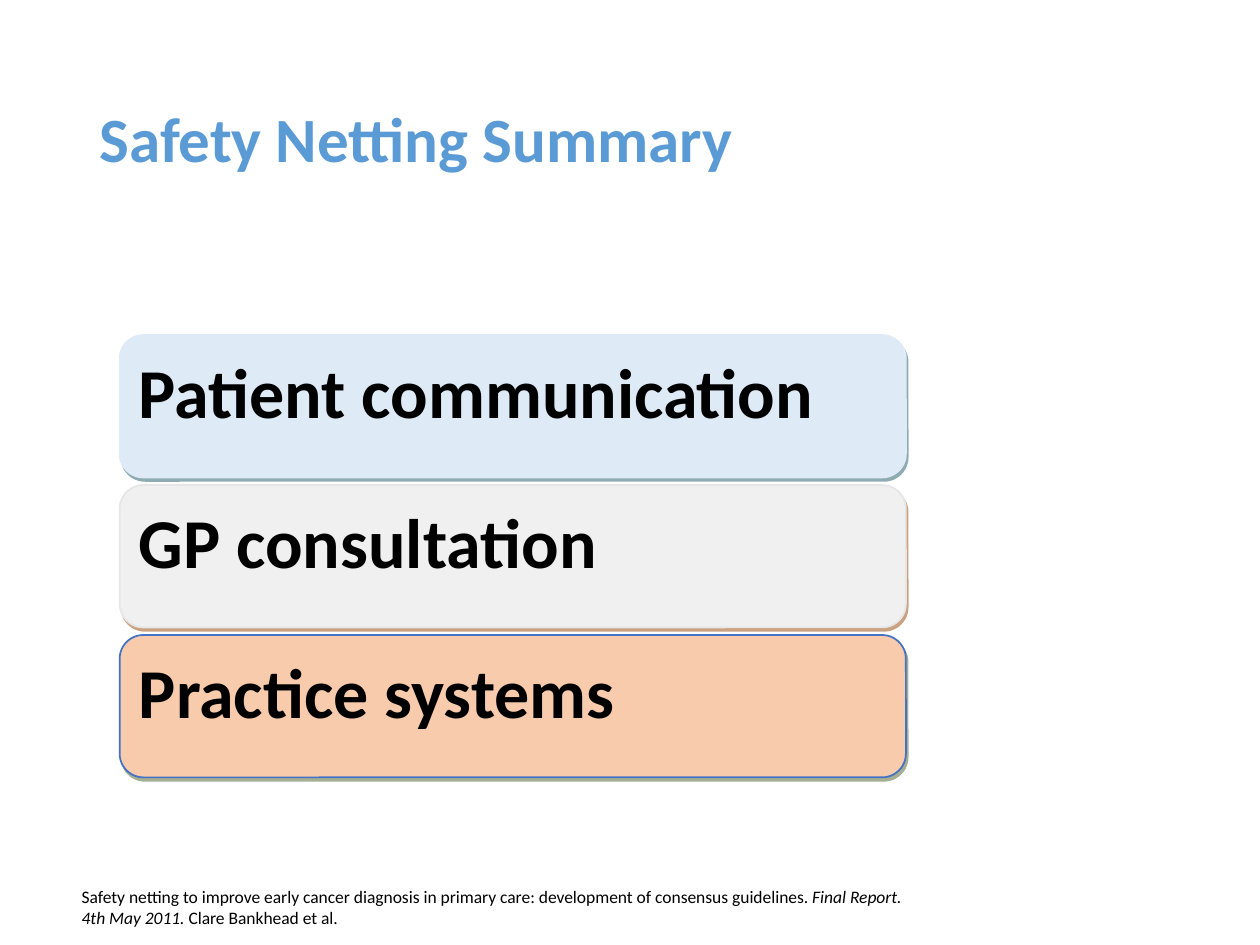
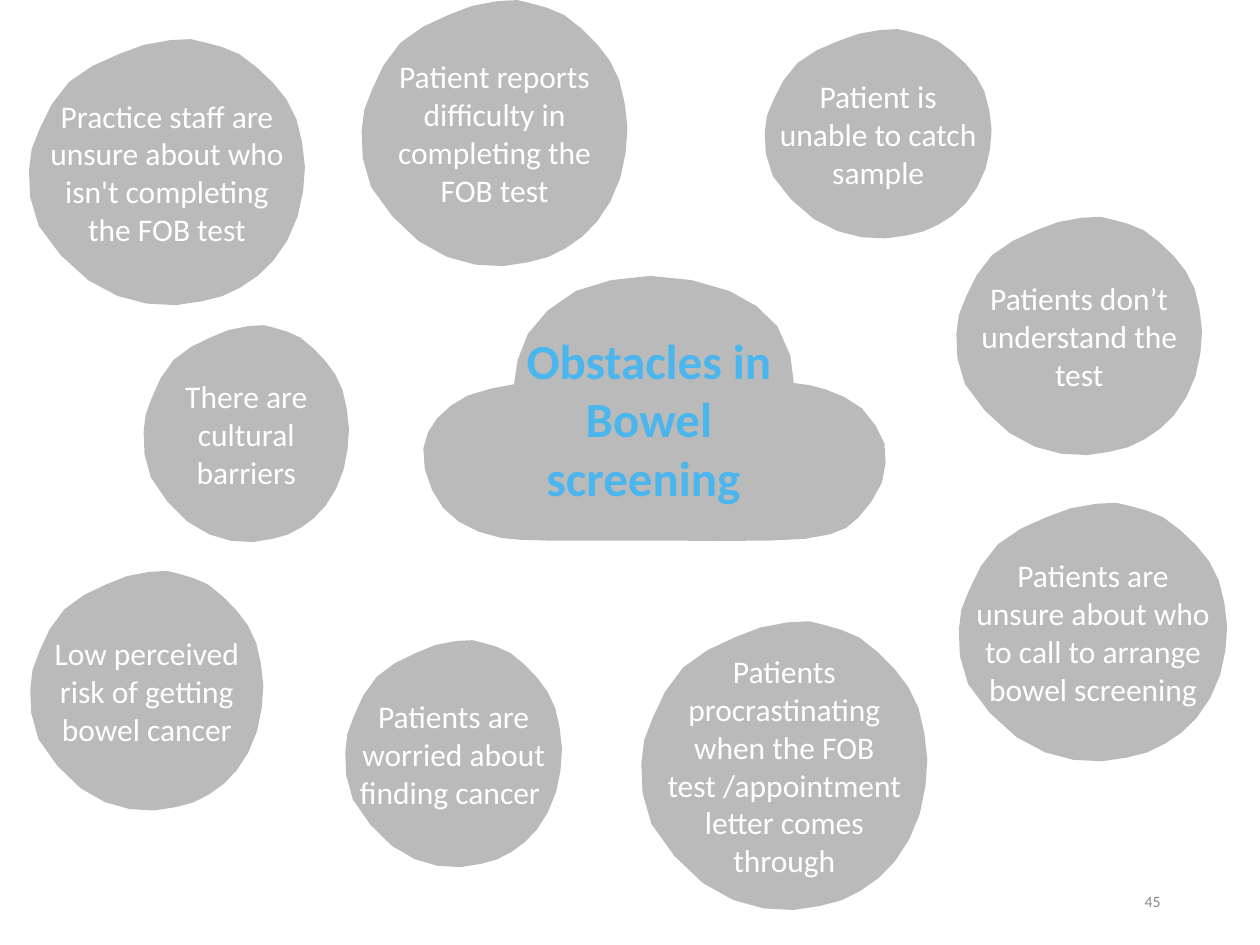
import lxml.etree
import pptx
import pptx.dml.color
import pptx.enum.shapes
import pptx.enum.text
import pptx.oxml.ns
import pptx.util

FONT = "Calibri"
COLORS = {
    "title": "5B9BD5", "ink": "000000", "paper": "FFFFFF", "bubble": "BABABA",
    "heading": "4BB6ED", "number": "8C8C8C",
    "patient": "DEEBF7", "patient shadow": "205867",
    "consultation": "F1F0F0", "consultation edge": "E7E6E6", "consultation shadow": "974706",
    "practice": "F8CBAD", "practice edge": "4472C4", "practice shadow": "4E6128",
}
COLUMNS = 100
ALIGN = pptx.enum.text.PP_ALIGN
ANCHOR = pptx.enum.text.MSO_ANCHOR
AUTO_SIZE = pptx.enum.text.MSO_AUTO_SIZE
rgb = pptx.dml.color.RGBColor.from_string

deck = pptx.Presentation()
deck.slide_width = pptx.util.Inches(10)
deck.slide_height = pptx.util.Inches(7.5)
title_only = deck.slide_layouts[5]


def grid(*cells):
    """Turn counts of square grid cells, 100 across the slide, into EMU."""
    return [round(cell * deck.slide_width / COLUMNS) for cell in cells]


def write(paragraph, text, size, color, bold=False, italic=False):
    run = paragraph.add_run()
    run.text = text
    run.font.name = FONT
    run.font.size = pptx.util.Pt(size)
    run.font.bold = bold
    run.font.italic = italic
    run.font.color.rgb = rgb(COLORS[color])


# Slide 1: safety netting summary
summary = deck.slides.add_slide(title_only)
title = summary.shapes.title
title.left, title.top, title.width, title.height = grid(6.9, 4, 86.2, 14.5)
title.text_frame.vertical_anchor = ANCHOR.MIDDLE
title.text_frame.auto_size = AUTO_SIZE.NONE
heading = title.text_frame.paragraphs[0]
heading.alignment = ALIGN.LEFT
heading.line_spacing = 0.9
write(heading, "Safety Netting Summary", 36, "title", bold=True)

AREAS = [
    ("Patient communication", "patient", "patient", "patient shadow"),
    ("GP consultation", "consultation", "consultation edge", "consultation shadow"),
    ("Practice systems", "practice", "practice edge", "practice shadow"),
]
AREA_TOP, AREA_PITCH = 26.6, 11.9
for row, (label, fill, edge, shadow) in enumerate(AREAS):
    area = summary.shapes.add_shape(
        pptx.enum.shapes.MSO_SHAPE.ROUNDED_RECTANGLE,
        *grid(9.5, AREA_TOP + row * AREA_PITCH, 62.4, 11.3))
    area.shadow.inherit = False
    area.fill.solid()
    area.fill.fore_color.rgb = rgb(COLORS[fill])
    area.line.color.rgb = rgb(COLORS[edge])
    area.line.width = pptx.util.Pt(1)

    effects = area._element.spPr.find(pptx.oxml.ns.qn("a:effectLst"))
    cast = lxml.etree.SubElement(
        effects, pptx.oxml.ns.qn("a:outerShdw"), blurRad="0",
        dist=str(pptx.util.Pt(2.2)), dir=str(63 * 60000), algn="ctr", rotWithShape="0")
    tint = lxml.etree.SubElement(cast, pptx.oxml.ns.qn("a:srgbClr"), val=COLORS[shadow])
    lxml.etree.SubElement(tint, pptx.oxml.ns.qn("a:alpha"), val="50000")

    area.text_frame.vertical_anchor = ANCHOR.TOP
    line = area.text_frame.paragraphs[0]
    line.alignment = ALIGN.LEFT
    line.space_after = pptx.util.Pt(10)
    write(line, label, 40, "ink", bold=True)

CITATION = [
    [("Safety netting to improve early cancer diagnosis in primary care: "
      "development of consensus guidelines. ", False), ("Final Report.", True)],
    [("4th May 2011. ", True), ("Clare Bankhead et al.", False)],
]
citation = summary.shapes.add_textbox(*grid(5.5, 69.8, 91.4, 4.4)).text_frame
citation.word_wrap = True
citation.auto_size = AUTO_SIZE.SHAPE_TO_FIT_TEXT
for row, parts in enumerate(CITATION):
    line = citation.add_paragraph() if row else citation.paragraphs[0]
    hanging = pptx.util.Inches(0.25)
    line._p.get_or_add_pPr().set("marL", str(hanging))
    line._p.get_or_add_pPr().set("indent", str(-hanging))
    for text, italic in parts:
        write(line, text, 10, "ink", italic=italic)

# Slide 2: obstacles in bowel screening
obstacles = deck.slides.add_slide(title_only)

page = obstacles.shapes.add_textbox(*grid(70.6, 69.5, 22.5, 4)).text_frame
page.word_wrap = True
page.vertical_anchor = ANCHOR.MIDDLE
page.paragraphs[0].alignment = ALIGN.RIGHT
write(page.paragraphs[0], "45", 9, "number")

# Each outline: its own width and height, its start, then curves of
# two control points and an end point.
BUBBLE = ((227, 229), (116, 1), [
    (100, 2, 88, 7, 74, 13), (60, 19, 44, 26, 33, 37), (22, 48, 14, 64, 9, 77),
    (3, 90, 0, 99, 0, 113), (0, 127, 0, 145, 8, 161), (17, 177, 34, 197, 49, 208),
    (64, 220, 82, 225, 97, 228), (113, 231, 130, 229, 142, 226),
    (155, 224, 164, 220, 174, 214), (184, 208, 193, 201, 201, 191),
    (209, 181, 217, 167, 221, 153), (225, 139, 227, 123, 227, 110),
    (226, 96, 224, 81, 220, 69), (216, 57, 209, 47, 201, 38),
    (193, 29, 182, 19, 173, 13), (163, 8, 154, 5, 145, 3), (135, 0, 133, -1, 116, 1),
])
CLOUD = ((367, 211), (180, 0), [
    (160, 0, 137, 5, 121, 12), (104, 20, 91, 34, 83, 46), (75, 58, 73, 76, 72, 86),
    (63, 87, 45, 91, 35, 95), (25, 100, 17, 106, 11, 113), (5, 120, 1, 128, 0, 137),
    (-1, 147, 2, 160, 7, 170), (11, 180, 19, 189, 28, 195), (37, 202, 50, 205, 62, 208),
    (73, 210, 77, 209, 98, 210), (119, 210, 188, 210, 188, 210),
    (217, 210, 253, 211, 276, 210), (298, 210, 311, 208, 323, 205),
    (334, 202, 338, 199, 345, 192), (352, 185, 360, 174, 364, 164),
    (367, 154, 368, 143, 366, 133), (363, 124, 356, 113, 348, 105),
    (340, 98, 328, 93, 319, 90), (310, 86, 304, 87, 294, 85),
    (295, 74, 290, 53, 281, 40), (271, 28, 260, 19, 243, 12), (226, 5, 201, 0, 180, 0),
])
OBSTACLES = [
    ("Patients are unsure about who to call to arrange bowel screening",
     BUBBLE, (76.1, 39.9, 21.3, 20.5)),
    ("Patients procrastinating when the FOB test /appointment letter comes through",
     BUBBLE, (50.9, 49.3, 22.7, 22.9)),
    ("There are cultural barriers", BUBBLE, (11.4, 25.8, 16.3, 17.2)),
    ("Patient reports difficulty in completing the FOB test",
     BUBBLE, (28.7, 0, 21.1, 21.1)),
    ("Patient is unable to catch sample", BUBBLE, (60.7, 2.3, 18, 16.6)),
    ("Low perceived risk of getting bowel cancer", BUBBLE, (2.4, 45.3, 18.5, 19)),
    ("Patients are worried about finding cancer ", BUBBLE, (27.4, 50.8, 17.2, 18)),
    ("Patients don’t understand the test", BUBBLE, (75.9, 17.2, 19.5, 18.9)),
    ("Practice staff are unsure about who isn't completing the FOB test",
     BUBBLE, (2.3, 3.1, 21.9, 21.1)),
    (None, CLOUD, (33.6, 21.9, 36.7, 21.1)),
]
for text, ((span_x, span_y), start, curves), (left, top, width, height) in OBSTACLES:
    points = [start]
    for x1, y1, x2, y2, x3, y3 in curves:
        x0, y0 = points[-1]
        middle = ((x0 + 3 * x1 + 3 * x2 + x3) / 8, (y0 + 3 * y1 + 3 * y2 + y3) / 8)
        points += [middle, (x3, y3)]
    edge = [grid(left + x / span_x * width, top + y / span_y * height) for x, y in points]
    builder = obstacles.shapes.build_freeform(*edge[0])
    builder.add_line_segments(edge[1:-1], close=True)
    obstacle = builder.convert_to_shape()
    obstacle.shadow.inherit = False
    obstacle.fill.solid()
    obstacle.fill.fore_color.rgb = rgb(COLORS["bubble"])
    obstacle.line.fill.background()
    if text:
        obstacle.text_frame.word_wrap = True
        obstacle.text_frame.vertical_anchor = ANCHOR.MIDDLE
        obstacle.text_frame.paragraphs[0].alignment = ALIGN.CENTER
        write(obstacle.text_frame.paragraphs[0], text, 18, "paper")

topic = obstacles.shapes.title
topic.left, topic.top, topic.width, topic.height = grid(39, 25.7, 25, 15.1)
topic.text_frame.vertical_anchor = ANCHOR.TOP
topic.text_frame.auto_size = AUTO_SIZE.NONE
topic.text_frame.paragraphs[0].alignment = ALIGN.CENTER
write(topic.text_frame.paragraphs[0], "Obstacles in Bowel screening ", 28, "heading", bold=True)
obstacles.shapes._spTree.append(topic._element)  # in front of the cloud

deck.save("out.pptx")
